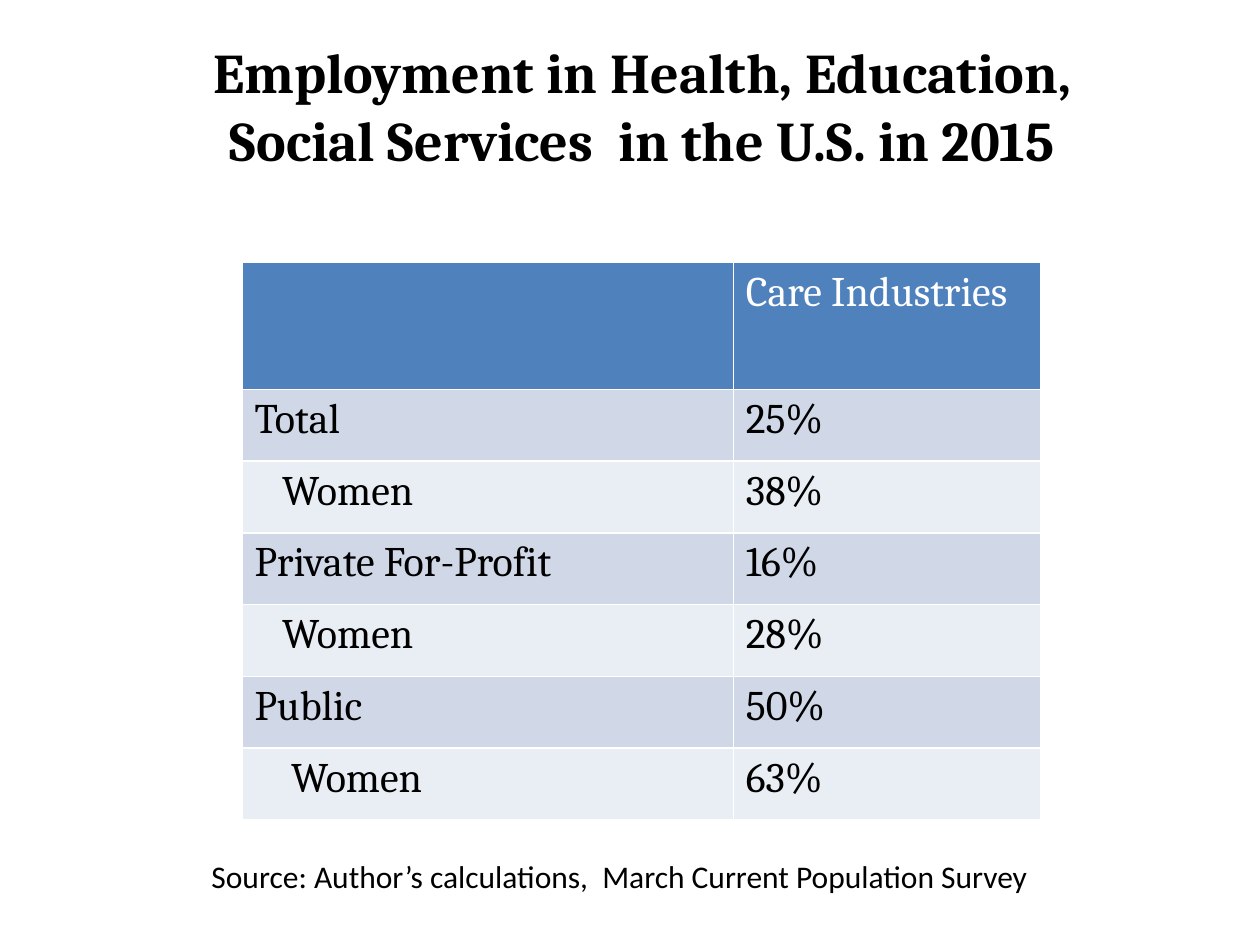
import pptx
import pptx.dml.color
import pptx.enum.text
import pptx.util

RGBColor = pptx.dml.color.RGBColor
Inches = pptx.util.Inches
BLACK = RGBColor(0x00, 0x00, 0x00)
WHITE = RGBColor(0xFF, 0xFF, 0xFF)
HEADER_BLUE = RGBColor(0x4F, 0x81, 0xBD)
BAND_DARK = RGBColor(0xD0, 0xD8, 0xE8)
BAND_LIGHT = RGBColor(0xE9, 0xED, 0xF4)

TITLE = "Employment in Health, Education,\nSocial Services  in the U.S. in 2015"
SOURCE = "Source: Author’s calculations,  March Current Population Survey"
COLUMN_WIDTHS = (3.9, 2.44)
HEADER_HEIGHT = 1.01
ROW_HEIGHT = 0.57
CELL_MARGIN = 0.1
ROWS = [
    ("", "Care Industries", 0),
    ("Total", "25%", 0),
    ("Women", "38%", 0.22),
    ("Private For-Profit", "16%", 0),
    ("Women", "28%", 0.22),
    ("Public", "50%", 0),
    ("Women", "63%", 0.29),
]


def format_text(text_frame, font_name, size, color, bold=False):
    """Apply one font to every run of a text frame."""
    for paragraph in text_frame.paragraphs:
        for run in paragraph.runs:
            run.font.name = font_name
            run.font.size = pptx.util.Pt(size)
            run.font.color.rgb = color
            run.font.bold = bold


def set_title(slide):
    """Place and format the two-line title."""
    title = slide.shapes.title
    title.left, title.top = Inches(1.5), Inches(0.25)
    title.width, title.height = Inches(7.2), Inches(1.18)
    title.text_frame.text = TITLE
    title.text_frame.vertical_anchor = pptx.enum.text.MSO_ANCHOR.TOP
    for paragraph in title.text_frame.paragraphs:
        paragraph.alignment = pptx.enum.text.PP_ALIGN.CENTER
    format_text(title.text_frame, "Cambria", 32, BLACK, bold=True)


def fill_cell(cell, text, fill, color, indent=0):
    """Write one table cell with its fill and left indent."""
    cell.text_frame.text = text
    cell.margin_left = Inches(CELL_MARGIN + indent)
    cell.fill.solid()
    cell.fill.fore_color.rgb = fill
    format_text(cell.text_frame, "Cambria", 24, color)


def add_employment_table(slide):
    """Add the table of employment shares by sector."""
    heights = [HEADER_HEIGHT] + [ROW_HEIGHT] * (len(ROWS) - 1)
    table = slide.shapes.add_table(
        len(ROWS), len(COLUMN_WIDTHS), Inches(1.92), Inches(2.08),
        Inches(sum(COLUMN_WIDTHS)), Inches(sum(heights))).table
    for column, width in zip(table.columns, COLUMN_WIDTHS):
        column.width = Inches(width)
    for index, (label, value, indent) in enumerate(ROWS):
        table.rows[index].height = Inches(heights[index])
        if index == 0:
            fill, color = HEADER_BLUE, WHITE
        else:
            fill, color = (BAND_DARK if index % 2 else BAND_LIGHT), BLACK
        fill_cell(table.cell(index, 0), label, fill, color, indent)
        fill_cell(table.cell(index, 1), value, fill, color)


def add_source(slide):
    """Add the source line below the table."""
    text_box = slide.shapes.add_textbox(
        Inches(1.58), Inches(6.75), Inches(6.72), Inches(0.4))
    text_box.text_frame.word_wrap = False
    text_box.text_frame.text = SOURCE
    format_text(text_box.text_frame, "Calibri", 18, BLACK)


def main():
    """Build and save the slide."""
    presentation = pptx.Presentation()
    presentation.slide_width = Inches(10)
    presentation.slide_height = Inches(7.5)
    slide = presentation.slides.add_slide(presentation.slide_layouts[5])
    set_title(slide)
    add_employment_table(slide)
    add_source(slide)
    presentation.save("out.pptx")


if __name__ == "__main__":
    main()
